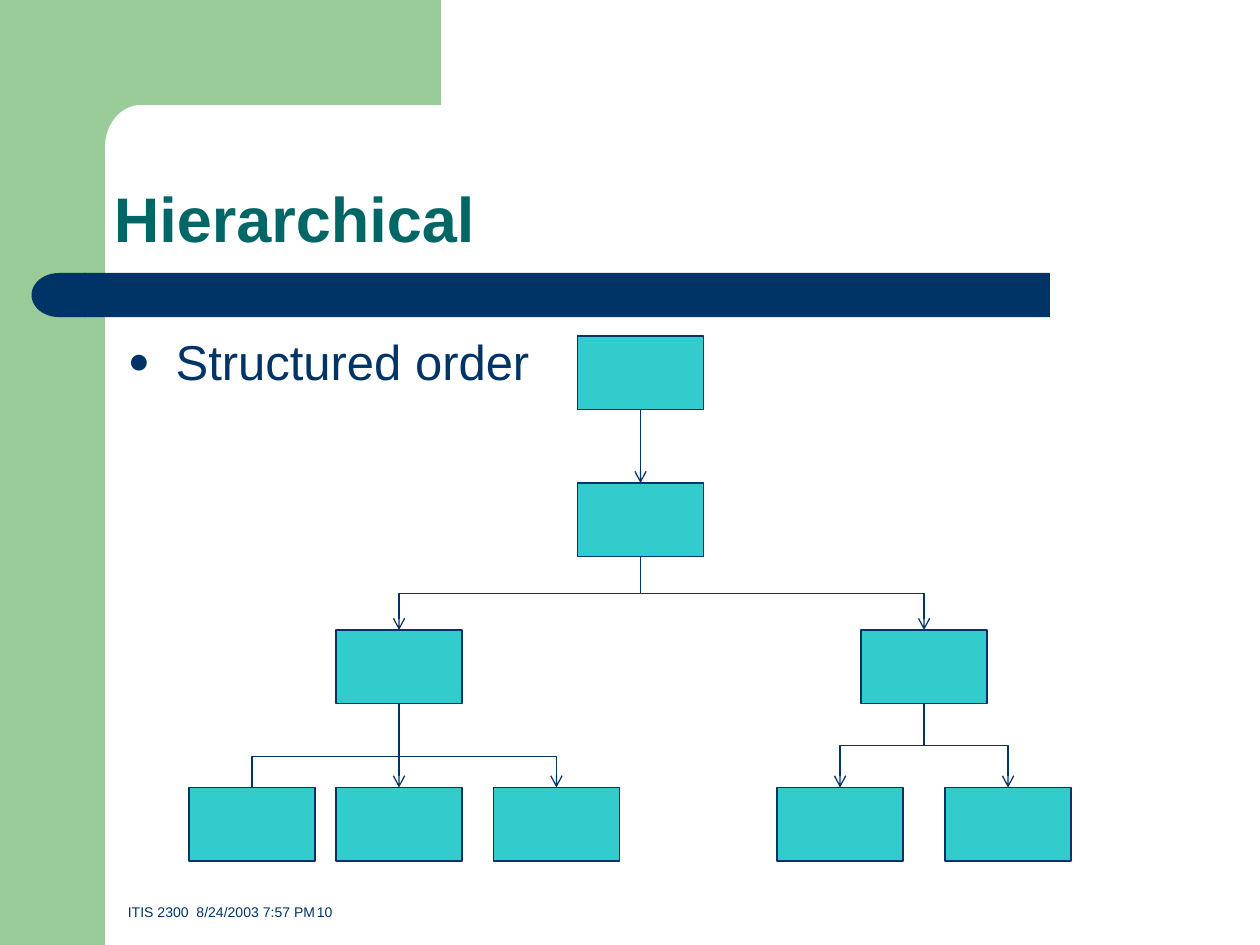
"""Build a slide showing a hierarchical structure as a tree of boxes."""
import math
from dataclasses import dataclass

from lxml import etree
from pptx import Presentation
from pptx.dml.color import RGBColor
from pptx.enum.shapes import MSO_CONNECTOR, MSO_SHAPE
from pptx.enum.text import MSO_ANCHOR
from pptx.oxml.ns import qn
from pptx.util import Inches, Pt

RECTANGLE, DELAY = MSO_SHAPE.RECTANGLE, MSO_SHAPE.FLOWCHART_DELAY
STRAIGHT, ELBOW = MSO_CONNECTOR.STRAIGHT, MSO_CONNECTOR.ELBOW
TOP, BOTTOM = MSO_ANCHOR.TOP, MSO_ANCHOR.BOTTOM
TOP_SITE, BOTTOM_SITE = 0, 2

GREEN = RGBColor(0x99, 0xCC, 0x99)
NAVY = RGBColor(0x00, 0x33, 0x66)
TEAL = RGBColor(0x00, 0x66, 0x66)
TURQUOISE = RGBColor(0x33, 0xCC, 0xCC)
FONT = "Arial"

COLUMNS, ROWS = 120, 90
UNIT = Inches(10) // COLUMNS
NODE_WIDTH, NODE_HEIGHT = 12, 7
LINE_WIDTH = Pt(0.75)


@dataclass(frozen=True)
class Area:
    """A rectangle in grid columns and rows."""
    column: float
    row: float
    width: float
    height: float


@dataclass(frozen=True)
class Node:
    """A box of the tree, with the name of the box above it."""
    name: str
    column: float
    row: float
    parent: str = ""


@dataclass(frozen=True)
class Label:
    """A text with its place and look."""
    text: str
    area: Area
    size: float
    color: RGBColor
    anchor: MSO_ANCHOR
    inset: float = 0.1
    bold: bool = False


NODES = (
    Node("root", 55, 32),
    Node("trunk", 55, 46, "root"),
    Node("left", 32, 60, "trunk"),
    Node("right", 82, 60, "trunk"),
    Node("left last", 47, 75),
    Node("left middle", 32, 75, "left"),
    Node("left first", 18, 75),
    Node("right first", 74, 75, "right"),
    Node("right last", 90, 75, "right"),
)
TITLE = Label("Hierarchical", Area(10, 10, 104, 15), 36, TEAL, BOTTOM, 0.07, True)
BODY = Label("Structured order", Area(11, 31, 43, 7), 28, NAVY, TOP)
FOOTER = Label("ITIS 2300  8/24/2003 7:57 PM\t10", Area(11, 82, 103, 6.2), 8, NAVY, BOTTOM)


def grid(value: float) -> int:
    """Turn grid units into a length."""
    return round(value * UNIT)


def place(area: Area) -> tuple:
    """Give left, top, width and height of an area."""
    return grid(area.column), grid(area.row), grid(area.width), grid(area.height)


def fill_plain(shape, color: RGBColor) -> None:
    """Fill a shape without outline or shadow."""
    shape.shadow.inherit = False
    shape.fill.solid()
    shape.fill.fore_color.rgb = color
    shape.line.fill.background()


def draw_block(page, kind: MSO_SHAPE, area: Area, color: RGBColor):
    """Draw a plain preset shape."""
    shape = page.shapes.add_shape(kind, *place(area))
    fill_plain(shape, color)
    return shape


def draw_corner(page) -> None:
    """Draw the green top band with its rounded inner corner."""
    arc = [(13.4 - 3.4 * math.sin(math.radians(angle)),
            14 - 4 * math.cos(math.radians(angle))) for angle in range(0, 91, 6)]
    outline = [(42, 10), *arc, (10, 15.4), (6, 15.4), (6, 0)]
    builder = page.shapes.build_freeform(grid(42), 0)
    builder.add_line_segments([(grid(x), grid(y)) for x, y in outline], close=True)
    fill_plain(builder.convert_to_shape(), GREEN)


def draw_label(page, label: Label):
    """Draw a text box and return its paragraph."""
    frame = page.shapes.add_textbox(*place(label.area)).text_frame
    frame.word_wrap = True
    frame.vertical_anchor = label.anchor
    frame.margin_left = Inches(label.inset)
    para = frame.paragraphs[0]
    para.text = label.text
    para.font.name = FONT
    para.font.size = Pt(label.size)
    para.font.bold = label.bold
    para.font.color.rgb = label.color
    return para


def add_bullet(para) -> None:
    """Give a paragraph a round hanging bullet."""
    settings = para._p.get_or_add_pPr()
    settings.set("marL", str(Inches(0.38)))
    settings.set("indent", str(-Inches(0.38)))
    color = etree.SubElement(settings, qn("a:buClr"))
    etree.SubElement(color, qn("a:srgbClr"), val=str(NAVY))
    etree.SubElement(settings, qn("a:buSzPct"), val="75000")
    etree.SubElement(settings, qn("a:buFont"), typeface=FONT)
    etree.SubElement(settings, qn("a:buChar"), char="●")


def draw_node(page, node: Node):
    """Draw one box of the tree."""
    area = Area(node.column, node.row, NODE_WIDTH, NODE_HEIGHT)
    box = draw_block(page, RECTANGLE, area, TURQUOISE)
    box.line.color.rgb = NAVY
    box.line.width = LINE_WIDTH
    return box


def draw_arrow(page, kind: MSO_CONNECTOR, begin: tuple, end: tuple):
    """Draw a connector with an open arrowhead at its end."""
    arrow = page.shapes.add_connector(kind, *begin, *end)
    arrow.line.color.rgb = NAVY
    arrow.line.width = LINE_WIDTH
    properties = arrow.element.spPr
    etree.SubElement(properties.find(qn("a:ln")), qn("a:tailEnd"), type="arrow")
    etree.SubElement(properties, qn("a:effectLst"))
    return arrow


def draw_elbow(page, begin: tuple, end: tuple, quarters: int, flips: tuple, bend: float) -> None:
    """Draw a turned elbow that leaves and arrives vertically."""
    middle_x, middle_y = (begin[0] + end[0]) // 2, (begin[1] + end[1]) // 2
    half_x = abs(end[1] - begin[1]) // 2 * flips[0]
    half_y = abs(end[0] - begin[0]) // 2 * flips[1]
    arrow = draw_arrow(page, ELBOW, (middle_x - half_x, middle_y - half_y),
                       (middle_x + half_x, middle_y + half_y))
    properties = arrow.element.spPr
    properties.find(qn("a:xfrm")).set("rot", str(quarters * 5400000))
    etree.SubElement(properties.find(".//" + qn("a:avLst")), qn("a:gd"),
                     name="adj1", fmla=f"val {round(bend * 100000)}")


def join(page, parent, child) -> None:
    """Lead an arrow from the foot of a box to the top of another."""
    begin = (parent.left + parent.width // 2, parent.top + parent.height)
    end = (child.left + child.width // 2, child.top)
    if begin[0] == end[0]:
        arrow = draw_arrow(page, STRAIGHT, begin, end)
        arrow.begin_connect(parent, BOTTOM_SITE)
        arrow.end_connect(child, TOP_SITE)
    elif end[0] < begin[0]:
        draw_elbow(page, begin, end, 1, (1, 1), 0.5)
    else:
        draw_elbow(page, begin, end, 3, (-1, 1), 0.5)


def join_tops(page, first, last) -> None:
    """Lead an arrow over the tops of two boxes in one row."""
    rise, thickness = Inches(0.25), Inches(0.002)
    begin = (first.left + first.width // 2, first.top + thickness)
    end = (last.left + last.width // 2, last.top)
    draw_elbow(page, begin, end, 1, (-1, -1), rise / thickness)


def main() -> None:
    """Build and save the deck."""
    deck = Presentation()
    deck.slide_width, deck.slide_height = grid(COLUMNS), grid(ROWS)
    page = deck.slides.add_slide(deck.slide_layouts[6])
    draw_block(page, RECTANGLE, Area(0, 0, 10, ROWS), GREEN)
    draw_corner(page)
    draw_block(page, RECTANGLE, Area(8, 26, 92, 4.2), NAVY)
    draw_block(page, DELAY, Area(3, 26, 5.2, 4.2), NAVY).rotation = 180
    draw_label(page, TITLE).line_spacing = 0.9
    body = draw_label(page, BODY)
    body.space_before = Pt(3)
    add_bullet(body)
    draw_label(page, FOOTER)
    boxes = {node.name: draw_node(page, node) for node in NODES}
    for node in NODES:
        if node.parent:
            join(page, boxes[node.parent], boxes[node.name])
    join_tops(page, boxes["left first"], boxes["left last"])
    deck.save("out.pptx")


if __name__ == "__main__":
    main()
